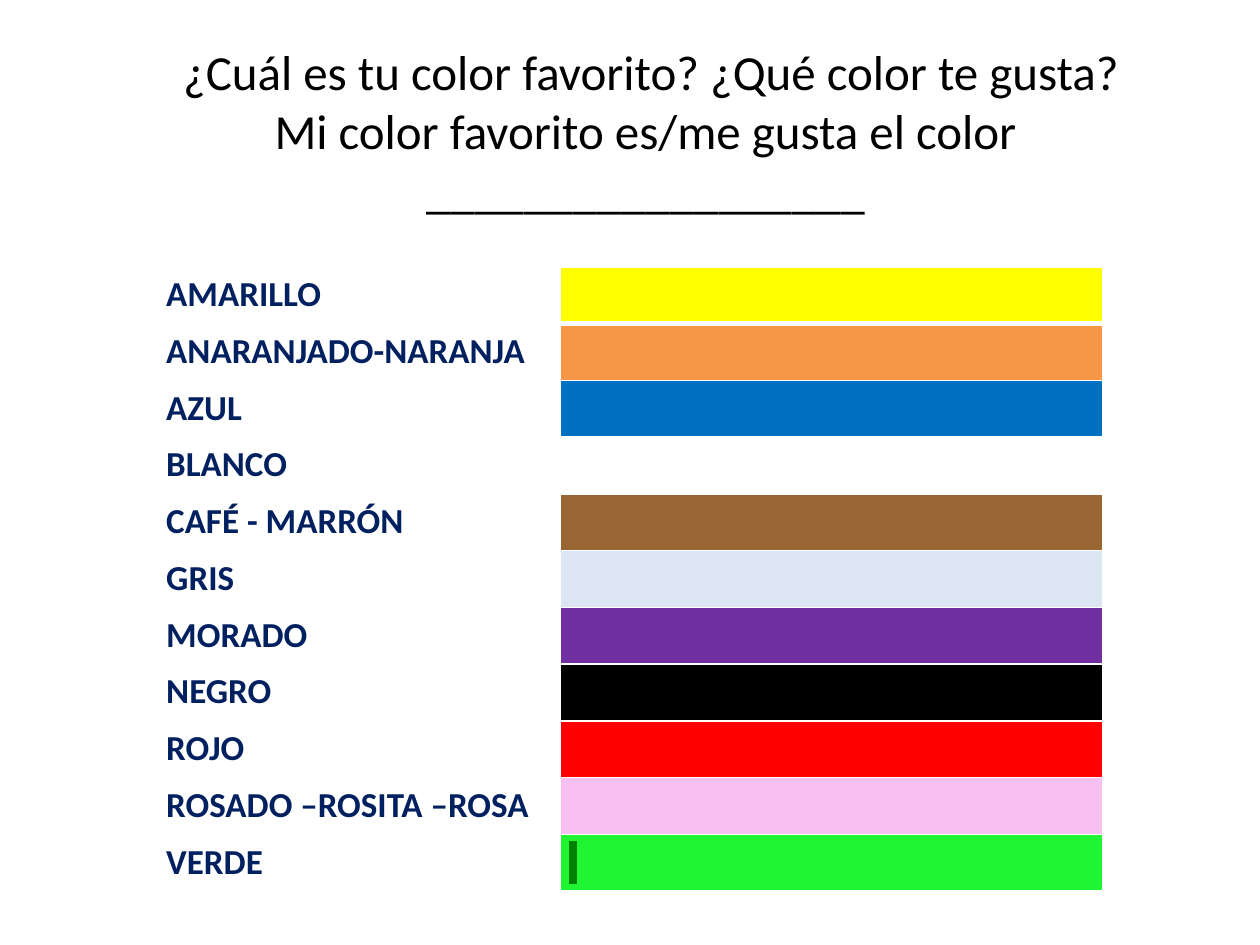
from dataclasses import dataclass

from lxml import etree
from pptx import Presentation
from pptx.dml.color import RGBColor
from pptx.enum import text
from pptx.oxml import ns
from pptx.util import Pt


@dataclass(frozen=True)
class Theme:
    font: str = "Calibri"
    ink: str = "000000"
    label: str = "002060"
    rule: str = "FFFFFF"
    mark: str = "008000"
    head: int = 28
    body: int = 20


THEME = Theme()
TITLE = ("¿Cuál es tu color favorito? ¿Qué color te gusta?\v"
         "Mi color favorito es/me gusta el color \v"
         "__________________ ")
COLORS = [
    ("AMARILLO", "FFFF00"),
    ("ANARANJADO-NARANJA", "F79646"),
    ("AZUL", "0070C0"),
    ("BLANCO", "FFFFFF"),
    ("CAFÉ - MARRÓN", "996633"),
    ("GRIS", "DCE6F2"),
    ("MORADO", "7030A0"),
    ("NEGRO", "000000"),
    ("ROJO", "FF0000"),
    ("ROSADO –ROSITA –ROSA", "F8C0F1"),
    ("VERDE", "1FF533"),
]


def style(para, size, color, bold=False):
    font = para.font
    font.name, font.size, font.bold = THEME.font, Pt(size), bold
    font.color.rgb = RGBColor.from_string(color)


def tint(parent, tag, color):
    """Add a child that holds one RGB colour."""
    node = etree.SubElement(parent, ns.qn(tag))
    etree.SubElement(node, ns.qn("a:srgbClr"), val=color)


def edge(cell, first, second):
    """Rule the cell; the line below the first row is thicker."""
    props = cell._tc.get_or_add_tcPr()
    widths = {"L": 1, "R": 1, "T": 3 if second else 1, "B": 3 if first else 1}
    for at, (side, width) in enumerate(widths.items()):
        line = etree.Element(ns.qn(f"a:ln{side}"), w=str(Pt(width)))
        tint(line, "a:solidFill", THEME.rule)
        props.insert(at, line)


def add_title(slide, left, top, width, height):
    box = slide.shapes.add_textbox(Pt(left), Pt(top), Pt(width), Pt(height))
    frame = box.text_frame
    frame.word_wrap = True
    frame.vertical_anchor = text.MSO_ANCHOR.MIDDLE
    frame.margin_top = Pt(8)
    para = frame.paragraphs[0]
    para.text = TITLE
    para.alignment = text.PP_ALIGN.CENTER
    style(para, THEME.head, THEME.ink)


def add_colors(slide, left, top, width, height):
    table = slide.shapes.add_table(
        len(COLORS), 2, Pt(left), Pt(top), Pt(width), Pt(height)).table
    table.first_row = table.horz_banding = False
    split = 230
    table.columns[0].width = Pt(split)
    table.columns[1].width = Pt(width - split)
    for at, (name, color) in enumerate(COLORS):
        table.rows[at].height = Pt(height / len(COLORS))
        label, swatch = table.cell(at, 0), table.cell(at, 1)
        label.text = name
        label.fill.background()
        swatch.fill.solid()
        swatch.fill.fore_color.rgb = RGBColor.from_string(color)
        for cell in (label, swatch):
            cell.margin_left = cell.margin_right = Pt(5)
            cell.margin_top = cell.margin_bottom = 0
            para = cell.text_frame.paragraphs[0]
            para.line_spacing = 1.15
            style(para, THEME.body, THEME.label, True)
            edge(cell, at == 0, at == 1)
    # The last swatch carries one highlighted space.
    run = swatch.text_frame.paragraphs[0].add_run()
    run.text = " "
    tint(run._r.get_or_add_rPr(), "a:highlight", THEME.mark)


def main():
    deck = Presentation()
    deck.slide_width, deck.slide_height = Pt(720), Pt(540)
    slide = deck.slides.add_slide(deck.slide_layouts[6])
    add_title(slide, 48, 6, 648, 132)
    add_colors(slide, 90, 152.5, 540, 357)
    deck.save("out.pptx")


if __name__ == "__main__":
    main()
